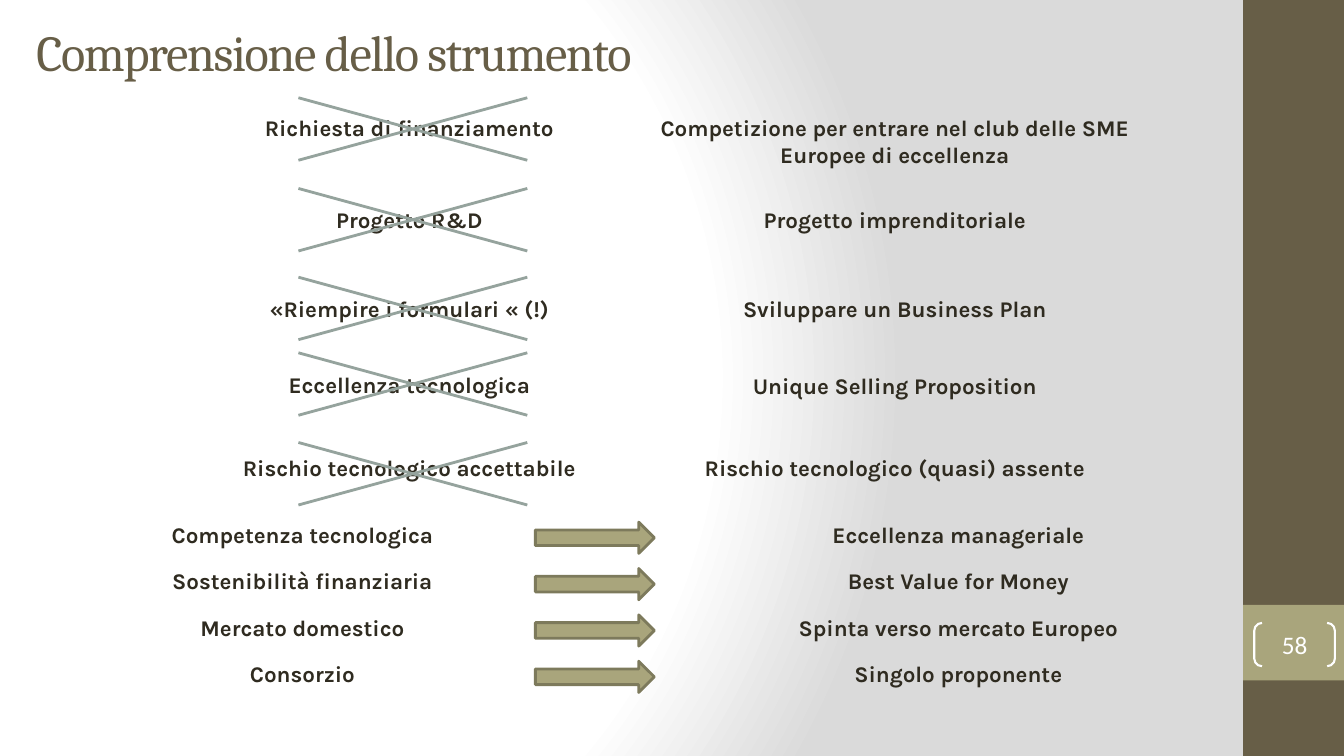
from dataclasses import dataclass

from lxml import etree
from pptx import Presentation
from pptx.dml.color import RGBColor
from pptx.enum.shapes import MSO_CONNECTOR, MSO_SHAPE
from pptx.enum.text import MSO_ANCHOR, MSO_AUTO_SIZE, PP_ALIGN
from pptx.oxml import parse_xml
from pptx.oxml.ns import nsdecls, qn
from pptx.util import Inches, Pt

RECTANGLE = MSO_SHAPE.RECTANGLE
RIGHT_ARROW = MSO_SHAPE.RIGHT_ARROW
BRACKETS = MSO_SHAPE.DOUBLE_BRACKET
STRAIGHT = MSO_CONNECTOR.STRAIGHT
MIDDLE = MSO_ANCHOR.MIDDLE
LEFT, CENTER = PP_ALIGN.LEFT, PP_ALIGN.CENTER
NO_FIT, GROW = MSO_AUTO_SIZE.NONE, MSO_AUTO_SIZE.SHAPE_TO_FIT_TEXT


@dataclass(frozen=True)
class Theme:
    title_font: str = "Cambria"
    body_font: str = "Karla"
    number_font: str = "Calibri"
    title_size: int = 36
    body_size: int = 16
    number_size: int = 18
    brown: str = "675E47"
    olive: str = "A9A57C"
    olive_dark: str = "7D7A5C"
    cross: str = "95A39D"
    ink: str = "2F2B20"
    white: str = "FFFFFF"
    grey: str = "DADADA"


class SlideBuilder:
    def __init__(self, theme, slide):
        self.theme = theme
        self.slide = slide

    def background(self):
        fill = self.slide.background.fill
        fill.gradient()
        stops = ((0, self.theme.white), (75, self.theme.white), (100, self.theme.grey))
        stop_xml = "".join(
            f'<a:gs pos="{pos * 1000}"><a:srgbClr val="{color}"/></a:gs>' for pos, color in stops)
        radial = parse_xml(
            f'<a:gradFill {nsdecls("a")} rotWithShape="1"><a:gsLst>{stop_xml}</a:gsLst>'
            '<a:path path="circle"><a:fillToRect l="20000" t="50000" r="100000" b="50000"/>'
            '</a:path></a:gradFill>')
        linear = self.slide.element.find(".//" + qn("a:gradFill"))
        linear.getparent().replace(linear, radial)

    def add_text(self, frame, text, font, size, color, align=CENTER, bold=False):
        frame.word_wrap = True
        paragraph = frame.paragraphs[0]
        paragraph.alignment = align
        run = paragraph.add_run()
        run.text = text
        run.font.name = font
        run.font.size = Pt(size)
        run.font.bold = bold
        run.font.color.rgb = RGBColor.from_string(color)
        return run

    def title(self, text, x, y, w, h):
        title = self.slide.shapes.title
        title.left, title.top, title.width, title.height = map(Inches, (x, y, w, h))
        frame = title.text_frame
        frame.auto_size = NO_FIT
        frame.vertical_anchor = MIDDLE
        theme = self.theme
        run = self.add_text(frame, text, theme.title_font, theme.title_size, theme.brown, LEFT)
        run.font._element.set("spc", "-100")

    def label(self, text, x, y, w, h=0.37):
        box = self.slide.shapes.add_textbox(*map(Inches, (x, y, w, h)))
        theme = self.theme
        self.add_text(box.text_frame, text, theme.body_font, theme.body_size, theme.ink, bold=True)
        box.text_frame.auto_size = GROW

    def shape(self, kind, x, y, w, h, fill=None, line=None, line_width=2):
        shape = self.slide.shapes.add_shape(kind, *map(Inches, (x, y, w, h)))
        shape.shadow.inherit = False
        if fill:
            shape.fill.solid()
            shape.fill.fore_color.rgb = RGBColor.from_string(fill)
        else:
            shape.fill.background()
        if line:
            shape.line.color.rgb = RGBColor.from_string(line)
            shape.line.width = Pt(line_width)
        else:
            shape.line.fill.background()
        return shape

    def cross(self, x, y, w, h):
        group = self.slide.shapes.add_group_shape()
        for start, end in ((x, x + w), (x + w, x)):
            stroke = group.shapes.add_connector(STRAIGHT, *map(Inches, (start, y, end, y + h)))
            stroke.line.color.rgb = RGBColor.from_string(self.theme.cross)
            stroke.line.width = Pt(2)
            etree.SubElement(stroke._element.spPr, qn("a:effectLst"))

    def page_number(self, number, x, y, w, h):
        theme = self.theme
        brackets = self.shape(BRACKETS, x, y, w, h, line=theme.white, line_width=1.5)
        brackets.adjustments[0] = 0.179
        frame = brackets.text_frame
        frame.margin_left = frame.margin_right = frame.margin_top = frame.margin_bottom = 0
        frame.vertical_anchor = MIDDLE
        self.add_text(frame, number, theme.number_font, theme.number_size, theme.white)


# Crossed-out ideas: left top, right top, cross top, left text, right text, right height
REPLACED = (
    (1.08, 1.08, 0.97, "Richiesta di finanziamento",
     "Competizione per entrare nel club delle SME Europee di eccellenza", 0.64),
    (2.0, 2.0, 1.87, "Progetto R&D", "Progetto imprenditoriale", 0.37),
    (2.88, 2.88, 2.75, "«Riempire i formulari « (!)", "Sviluppare un Business Plan", 0.37),
    (3.63, 3.64, 3.5, "Eccellenza tecnologica", "Unique Selling Proposition", 0.37),
    (4.46, 4.46, 4.39, "Rischio tecnologico accettabile",
     "Rischio tecnologico (quasi) assente", 0.37),
)
# Ideas that evolve, joined by an arrow
EVOLVED = (
    ("Competenza tecnologica", "Eccellenza manageriale"),
    ("Sostenibilità finanziaria", "Best Value for Money"),
    ("Mercato domestico", "Spinta verso mercato Europeo"),
    ("Consorzio", "Singolo proponente"),
)
EVOLVED_TOP, EVOLVED_STEP = 5.12, 0.46
LEFT_WIDTH, RIGHT_WIDTH = 4.34, 5.17


def main():
    deck = Presentation()
    deck.slide_width, deck.slide_height = Inches(13.33), Inches(7.5)
    theme = Theme()
    builder = SlideBuilder(theme, deck.slides.add_slide(deck.slide_layouts[5]))

    # Background, side band and title
    builder.background()
    builder.shape(RECTANGLE, 12.33, 0, 1, 7.5, theme.brown)
    builder.shape(RECTANGLE, 12.33, 6, 1, 0.75, theme.olive)
    builder.title("Comprensione dello strumento", 0.26, -0.12, 11.11, 1.25)

    # Crossed-out ideas and their replacements
    for left_top, right_top, cross_top, old, new, new_height in REPLACED:
        builder.label(old, 1.89, left_top, LEFT_WIDTH)
        builder.label(new, 6.29, right_top, RIGHT_WIDTH, new_height)
        builder.cross(2.96, cross_top, 2.27, 0.62)

    # Evolving ideas
    for row, (before, after) in enumerate(EVOLVED):
        top = EVOLVED_TOP + row * EVOLVED_STEP
        builder.shape(RIGHT_ARROW, 5.31, top + 0.06, 1.18, 0.31, theme.olive, theme.olive_dark)
        builder.label(before, 0.83, top, LEFT_WIDTH)
        builder.label(after, 6.92, top, RIGHT_WIDTH)

    # Page number
    builder.page_number("58", 12.44, 6.18, 0.8, 0.43)

    deck.save("out.pptx")


if __name__ == "__main__":
    main()
